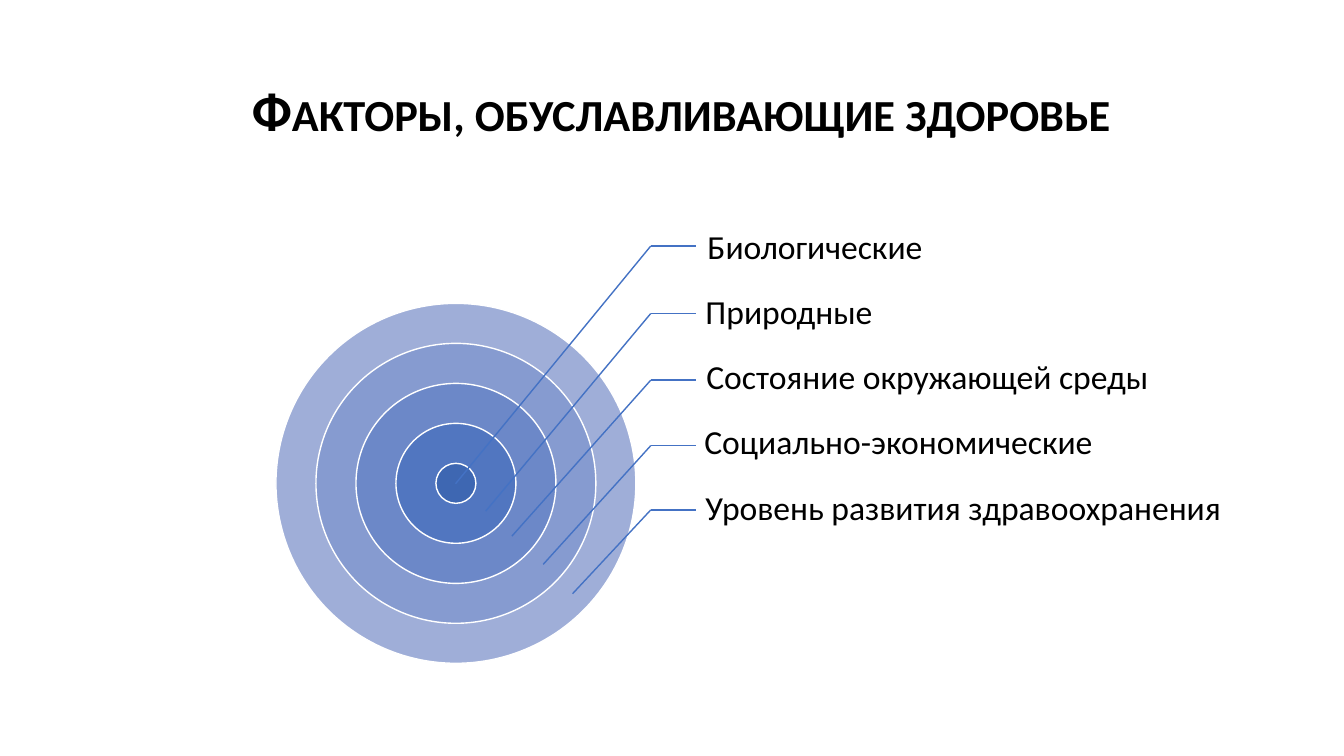
from pptx import Presentation
from pptx.dml.color import RGBColor
from pptx.enum.shapes import MSO_CONNECTOR as Connector, MSO_SHAPE as Shape
from pptx.enum.text import MSO_ANCHOR as Anchor, MSO_AUTO_SIZE as AutoSize, PP_ALIGN as Align
from pptx.oxml.ns import qn
from pptx.util import Cm, Pt
from lxml.etree import SubElement

COLORS = {"text": "000000", "edge": "FFFFFF", "leader": "4472C4"}
RINGS = ["9FAED8", "869BD0", "6C88C8", "5176C0", "3E67B2"]
CENTER_X, CENTER_Y, OUTER_DIAMETER = 11.49, 12.18, 9.07
ELBOW_X, LEADER_END = 16.4, 17.53
FIRST_LABEL_Y, LABEL_STEP = 6.27, 1.64

# label, left, width, height, leader height, leader tip
FACTORS = [
    ("Биологические", 17.35, 8.0, 1.37, 6.2, (11.48, 12.19)),
    ("Природные", 17.3, 7.47, 1.35, 7.9, (12.24, 12.88)),
    ("Состояние окружающей среды", 17.32, 14.22, 1.12, 9.58, (12.9, 13.51)),
    ("Социально-экономические", 17.27, 13.94, 1.32, 11.23, (13.69, 14.22)),
    ("Уровень развития здравоохранения", 17.3, 13.74, 1.04, 12.85, (14.43, 14.96)),
]


class Page:
    """Holds the text style and the slide being filled."""

    font = "Calibri"

    def __init__(self, deck):
        """Add a title-only slide to the deck."""
        self.slide = deck.slides.add_slide(deck.slide_layouts[5])

    def fill_text(self, box, text, size, align, bold=False):
        """Put one styled, vertically centred paragraph in a box."""
        frame = box.text_frame
        frame.text = text
        frame.word_wrap = True
        frame.auto_size = AutoSize.NONE
        frame.vertical_anchor = Anchor.MIDDLE
        para = frame.paragraphs[0]
        para.alignment = align
        para.line_spacing = 0.9
        span = para.runs[0]
        span.font.name = self.font
        span.font.size = Pt(size)
        span.font.bold = bold
        span.font.color.rgb = RGBColor.from_string(COLORS["text"])
        return span

    def title(self, text, left, top, width, height):
        """Place the title in small capitals."""
        box = self.slide.shapes.title
        box.left, box.top, box.width, box.height = map(Cm, (left, top, width, height))
        span = self.fill_text(box, text, 39.6, Align.CENTER, bold=True)
        span.font._element.set("cap", "small")

    def ring(self, diameter, color):
        """Draw a circle around the common centre."""
        left, top = CENTER_X - diameter / 2, CENTER_Y - diameter / 2
        circle = self.slide.shapes.add_shape(
            Shape.OVAL, Cm(left), Cm(top), Cm(diameter), Cm(diameter))
        circle.shadow.inherit = False
        circle.fill.solid()
        circle.fill.fore_color.rgb = RGBColor.from_string(color)
        circle.line.color.rgb = RGBColor.from_string(COLORS["edge"])
        circle.line.width = Pt(1)

    def label(self, text, left, middle, width, height):
        """Add a label centred on a given height."""
        box = self.slide.shapes.add_textbox(
            Cm(left), Cm(middle - height / 2), Cm(width), Cm(height))
        frame = box.text_frame
        frame.margin_left = Cm(0.48)
        frame.margin_top = frame.margin_right = frame.margin_bottom = Cm(0.08)
        self.fill_text(box, text, 24, Align.LEFT)

    def line(self, start, end):
        """Draw a thin straight leader line."""
        leader = self.slide.shapes.add_connector(
            Connector.STRAIGHT, *map(Cm, (*start, *end)))
        leader.line.color.rgb = RGBColor.from_string(COLORS["leader"])
        leader.line.width = Pt(1)
        SubElement(leader._element.spPr, qn("a:effectLst"))


def main():
    """Build the slide and save it."""
    deck = Presentation()
    deck.slide_width, deck.slide_height = Cm(33.87), Cm(19.05)
    page = Page(deck)
    page.title("Факторы, обуславливающие здоровье", 2.56, 1.02, 29.21, 3.68)
    for index, color in enumerate(RINGS):
        page.ring(OUTER_DIAMETER * (9 - 2 * index) / 9, color)
    for index, (text, left, width, height, level, tip) in enumerate(FACTORS):
        page.label(text, left, FIRST_LABEL_Y + index * LABEL_STEP, width, height)
        page.line((ELBOW_X, level), (LEADER_END, level))
        page.line((ELBOW_X, level), tip)
    deck.save("out.pptx")


if __name__ == "__main__":
    main()
